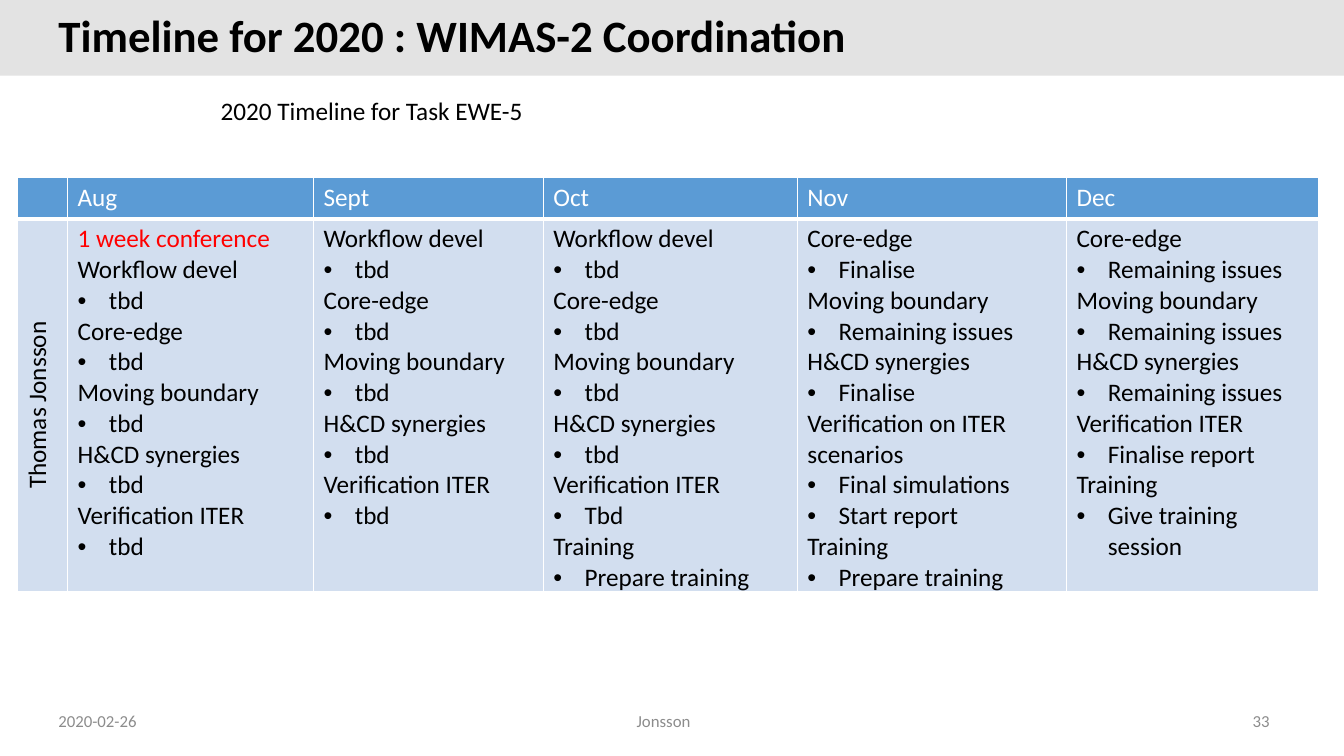
from lxml.etree import SubElement
from pptx import Presentation
from pptx.dml.color import RGBColor
from pptx.enum.shapes import MSO_SHAPE
from pptx.enum.text import MSO_ANCHOR, MSO_AUTO_SIZE, PP_ALIGN
from pptx.oxml.ns import qn
from pptx.util import Inches, Pt

WIDE, HIGH = Inches(13.33), Inches(7.5)
FONT = "Calibri"
BLACK, WHITE, RED, GREY = "000000", "FFFFFF", "FF0000", "8C8C8C"
BAND, HEAD, BODY = "E3E3E3", "5B9BD5", "D2DEEF"
MARK = "- "

MONTHS = ["Aug", "Sept", "Oct", "Nov", "Dec"]
WIDTHS = [3.75, 18.3, 17.1, 18.9, 20.03, 18.75]
HEIGHTS = [5.47, 49.33]
ALERT = "1 week conference"
TOPICS = ["Workflow devel", "Core-edge", "Moving boundary",
          "H&CD synergies", "Verification ITER"]
OPEN = [line for topic in TOPICS for line in (topic, MARK + "tbd")]
PREPARE = ["Training", MARK + "Prepare training"]
ISSUES = MARK + "Remaining issues"
FINAL = MARK + "Finalise"
PLANS = [
    [ALERT] + OPEN,
    OPEN,
    OPEN[:-1] + [MARK + "Tbd"] + PREPARE,
    ["Core-edge", FINAL, "Moving boundary", ISSUES, "H&CD synergies", FINAL,
     "Verification on ITER scenarios", MARK + "Final simulations",
     MARK + "Start report"] + PREPARE,
    ["Core-edge", ISSUES, "Moving boundary", ISSUES, "H&CD synergies", ISSUES,
     "Verification ITER", MARK + "Finalise report",
     "Training", MARK + "Give training session"],
]


def color(code):
    return RGBColor.from_string(code)


def across(share):
    return int(WIDE * share / 100)


def down(share):
    return int(HIGH * share / 100)


def place(x, y, w, h):
    return across(x), down(y), across(w), down(h)


def style(para, size, tint, bold=False, align=None):
    if align is not None:
        para.alignment = align
    for run in para.runs:
        run.font.name = FONT
        run.font.size = Pt(size)
        run.font.bold = bold
        run.font.color.rgb = color(tint)


def add_band(slide):
    band = slide.shapes.add_shape(MSO_SHAPE.RECTANGLE, *place(0, 0, 100, 10))
    band.shadow.inherit = False
    band.fill.solid()
    band.fill.fore_color.rgb = color(BAND)
    band.line.fill.background()
    slide.shapes._spTree.insert(2, band._element)


def set_title(slide, text):
    title = slide.shapes.title
    title.left, title.top, title.width, title.height = place(3.6, 1.73, 86.57, 6.53)
    frame = title.text_frame
    frame.text = text
    frame.auto_size = MSO_AUTO_SIZE.NONE
    frame.vertical_anchor = MSO_ANCHOR.MIDDLE
    para = frame.paragraphs[0]
    para.line_spacing = 0.9
    style(para, 32, BLACK, True, PP_ALIGN.LEFT)


def add_text(slide, box, text, size, tint, align=PP_ALIGN.LEFT,
             anchor=MSO_ANCHOR.TOP):
    frame = slide.shapes.add_textbox(*place(*box)).text_frame
    frame.word_wrap = True
    frame.vertical_anchor = anchor
    frame.text = text
    style(frame.paragraphs[0], size, tint, align=align)


def add_edges(cell, base):
    props = cell._tc.get_or_add_tcPr()
    for side, width in (("L", 1), ("R", 1), ("T", 1), ("B", base)):
        edge = SubElement(props, qn("a:ln" + side), w=str(Pt(width)))
        fill = SubElement(edge, qn("a:solidFill"))
        SubElement(fill, qn("a:srgbClr"), val=WHITE)


def fill_cell(cell, tint, base):
    add_edges(cell, base)
    cell.fill.solid()
    cell.fill.fore_color.rgb = color(tint)


def add_bullet(para):
    props = para._p.get_or_add_pPr()
    indent = Inches(0.31)
    props.set("marL", str(indent))
    props.set("indent", str(-indent))
    SubElement(props, qn("a:buFont"), typeface="Arial")
    SubElement(props, qn("a:buChar"), char="•")


def write_plan(cell, lines):
    cell.margin_bottom = 0
    frame = cell.text_frame
    for i, line in enumerate(lines):
        para = frame.add_paragraph() if i else frame.paragraphs[0]
        para.text = line.removeprefix(MARK)
        if line.startswith(MARK):
            add_bullet(para)
        style(para, 18, RED if line == ALERT else BLACK)


def write_name(cell, name):
    cell._tc.get_or_add_tcPr().set("vert", "vert270")
    cell.text_frame.text = name
    style(cell.text_frame.paragraphs[0], 18, BLACK, align=PP_ALIGN.CENTER)


def add_plan(slide):
    box = place(1.28, 23.47, sum(WIDTHS), sum(HEIGHTS))
    table = slide.shapes.add_table(len(HEIGHTS), len(WIDTHS), *box).table
    for column, share in zip(table.columns, WIDTHS):
        column.width = across(share)
    for row, share in zip(table.rows, HEIGHTS):
        row.height = down(share)
    for col in range(len(WIDTHS)):
        fill_cell(table.cell(0, col), HEAD, 3)
        fill_cell(table.cell(1, col), BODY, 1)
    write_name(table.cell(1, 0), "Thomas Jonsson")
    for col, (month, lines) in enumerate(zip(MONTHS, PLANS), 1):
        head = table.cell(0, col).text_frame
        head.text = month
        style(head.paragraphs[0], 18, WHITE)
        write_plan(table.cell(1, col), lines)


def add_footer(slide):
    parts = [
        (3.6, 22.5, "2020-02-26", PP_ALIGN.LEFT),
        (32.5, 33.75, "Jonsson", PP_ALIGN.CENTER),
        (72.7, 22.5, "33", PP_ALIGN.RIGHT),
    ]
    for x, w, text, align in parts:
        add_text(slide, (x, 92.67, w, 5.33), text, 12, GREY, align,
                 MSO_ANCHOR.MIDDLE)


def main():
    deck = Presentation()
    deck.slide_width, deck.slide_height = WIDE, HIGH
    slide = deck.slides.add_slide(deck.slide_layouts[5])
    add_band(slide)
    set_title(slide, "Timeline for 2020 : WIMAS-2 Coordination")
    add_text(slide, (15.68, 12, 55.5, 5.33), "2020 Timeline for Task EWE-5",
             18, BLACK)
    add_plan(slide)
    add_footer(slide)
    deck.save("out.pptx")


if __name__ == "__main__":
    main()
